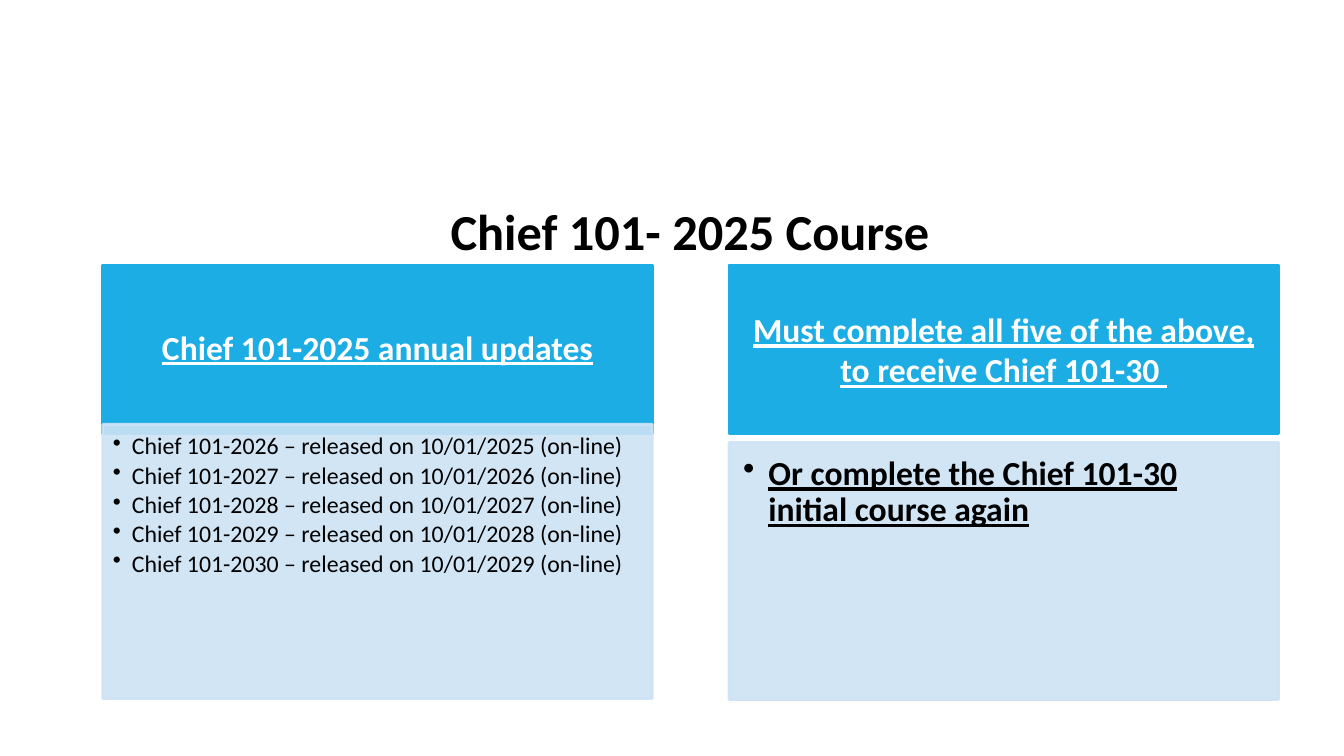
import pptx
import pptx.dml.color
import pptx.enum.shapes
import pptx.enum.text
import pptx.oxml
import pptx.oxml.ns
import pptx.util
from lxml import etree

Inches = pptx.util.Inches
Pt = pptx.util.Pt
ANCHOR = pptx.enum.text.MSO_ANCHOR
ALIGN = pptx.enum.text.PP_ALIGN

TITLE = "Chief 101- 2025 Course"
COLUMNS = [
    {
        "heading": "Chief 101-2025 annual updates",
        "heading_spacing": 0.9,
        "items": [
            f"Chief 101-{year} – released on 10/01/{year - 1} (on-line)"
            for year in range(2026, 2031)
        ],
        "size": 17, "emphasis": False, "indent": 0.19,
        "body_top": 4.21, "body_height": 2.72,
        "insets": (0.1, 0.1, 0.13, 0.15),
    },
    {
        "heading": "Must complete all five of the above, to receive Chief 101-30 ",
        "heading_spacing": 1.0,
        "items": ["Or complete the Chief 101-30 initial course again"],
        "size": 24, "emphasis": True, "indent": 0.25,
        "body_top": 4.39, "body_height": 2.55,
        "insets": (0.14, 0.14, 0.19, 0.21),
    },
]
COLORS = {"heading": "1CADE4", "body": "CDE3F5", "dark": "000000", "light": "FFFFFF"}
FONT = "Calibri"
LEFT, COLUMN_WIDTH, COLUMN_STEP = 1.02, 5.45, 6.21
HEADING_TOP, HEADING_HEIGHT = 2.63, 1.67
HEADING_INSETS = (0.19, 0.11, 0.19, 0.11)


def rgb(name):
    return pptx.dml.color.RGBColor.from_string(COLORS[name])


def set_frame(frame, insets, anchor):
    frame.word_wrap = True
    frame.auto_size = pptx.enum.text.MSO_AUTO_SIZE.NONE
    frame.vertical_anchor = anchor
    (frame.margin_left, frame.margin_top,
     frame.margin_right, frame.margin_bottom) = map(Inches, insets)


def add_run(paragraph, text, size, color, bold=False, underline=False):
    run = paragraph.add_run()
    run.text = text
    run.font.name = FONT
    run.font.size = Pt(size)
    run.font.bold = bold
    run.font.underline = underline
    run.font.color.rgb = rgb(color)


def add_bullet(paragraph, indent):
    properties = paragraph._p.get_or_add_pPr()
    properties.set("marL", str(Inches(indent)))
    properties.set("indent", str(-Inches(indent)))
    bullet = etree.SubElement(properties, pptx.oxml.ns.qn("a:buChar"))
    bullet.set("char", "•")


def add_panel(slide, left, top, height, color, opacity=100):
    shape = slide.shapes.add_shape(
        pptx.enum.shapes.MSO_SHAPE.RECTANGLE,
        Inches(left), Inches(top), Inches(COLUMN_WIDTH), Inches(height))
    shape.shadow.inherit = False
    shape.fill.solid()
    shape.fill.fore_color.rgb = rgb(color)
    shape.line.color.rgb = rgb(color)
    shape.line.width = Pt(2)
    if opacity < 100:
        for fill_color in shape._element.spPr.iter(pptx.oxml.ns.qn("a:srgbClr")):
            alpha = etree.SubElement(fill_color, pptx.oxml.ns.qn("a:alpha"))
            alpha.set("val", str(opacity * 1000))
    return shape


def add_column(slide, column, left):
    heading = add_panel(slide, left, HEADING_TOP, HEADING_HEIGHT, "heading")
    set_frame(heading.text_frame, HEADING_INSETS, ANCHOR.MIDDLE)
    paragraph = heading.text_frame.paragraphs[0]
    paragraph.alignment = ALIGN.CENTER
    paragraph.line_spacing = column["heading_spacing"]
    add_run(paragraph, column["heading"], 24, "light", True, True)

    body = add_panel(slide, left, column["body_top"], column["body_height"], "body", 90)
    frame = body.text_frame
    set_frame(frame, column["insets"], ANCHOR.TOP)
    for index, item in enumerate(column["items"]):
        paragraph = frame.add_paragraph() if index else frame.paragraphs[0]
        add_bullet(paragraph, column["indent"])
        paragraph.level = 1
        paragraph.alignment = ALIGN.LEFT
        paragraph.line_spacing = 0.9
        paragraph.space_after = Pt(column["size"] * 0.15)
        add_run(paragraph, item, column["size"], "dark",
                column["emphasis"], column["emphasis"])


def main():
    presentation = pptx.Presentation()
    presentation.slide_width = Inches(13.33)
    presentation.slide_height = Inches(7.5)
    slide = presentation.slides.add_slide(presentation.slide_layouts[5])

    title = slide.shapes.title
    title.left, title.top = Inches(LEFT), Inches(1.95)
    title.width, title.height = Inches(11.65), Inches(0.68)
    set_frame(title.text_frame, (0.1, 0.05, 0.1, 0.05), ANCHOR.MIDDLE)
    paragraph = title.text_frame.paragraphs[0]
    paragraph.alignment = ALIGN.CENTER
    add_run(paragraph, TITLE, 36, "dark", bold=True)

    for index, column in enumerate(COLUMNS):
        add_column(slide, column, LEFT + index * COLUMN_STEP)
    presentation.save("out.pptx")


if __name__ == "__main__":
    main()
